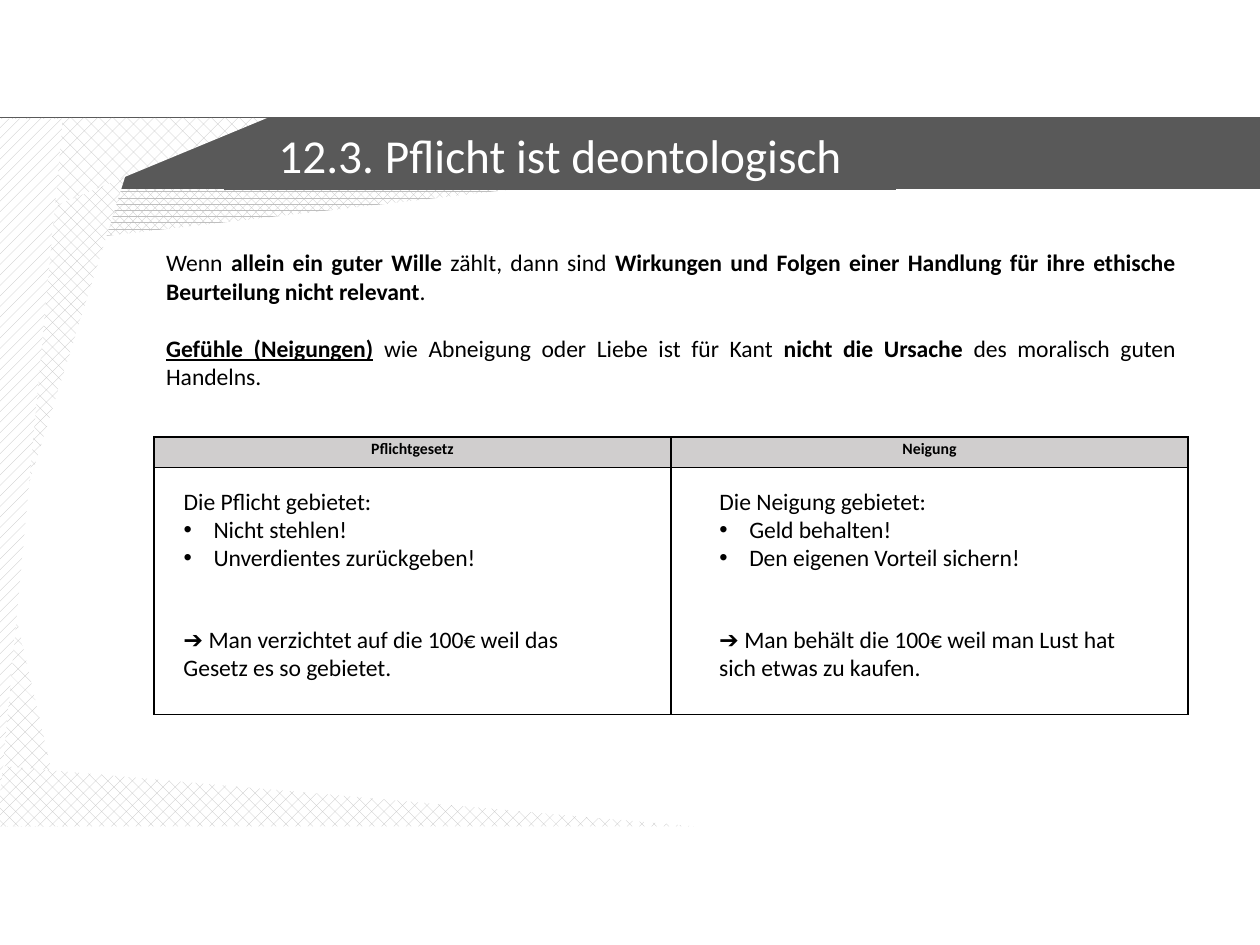
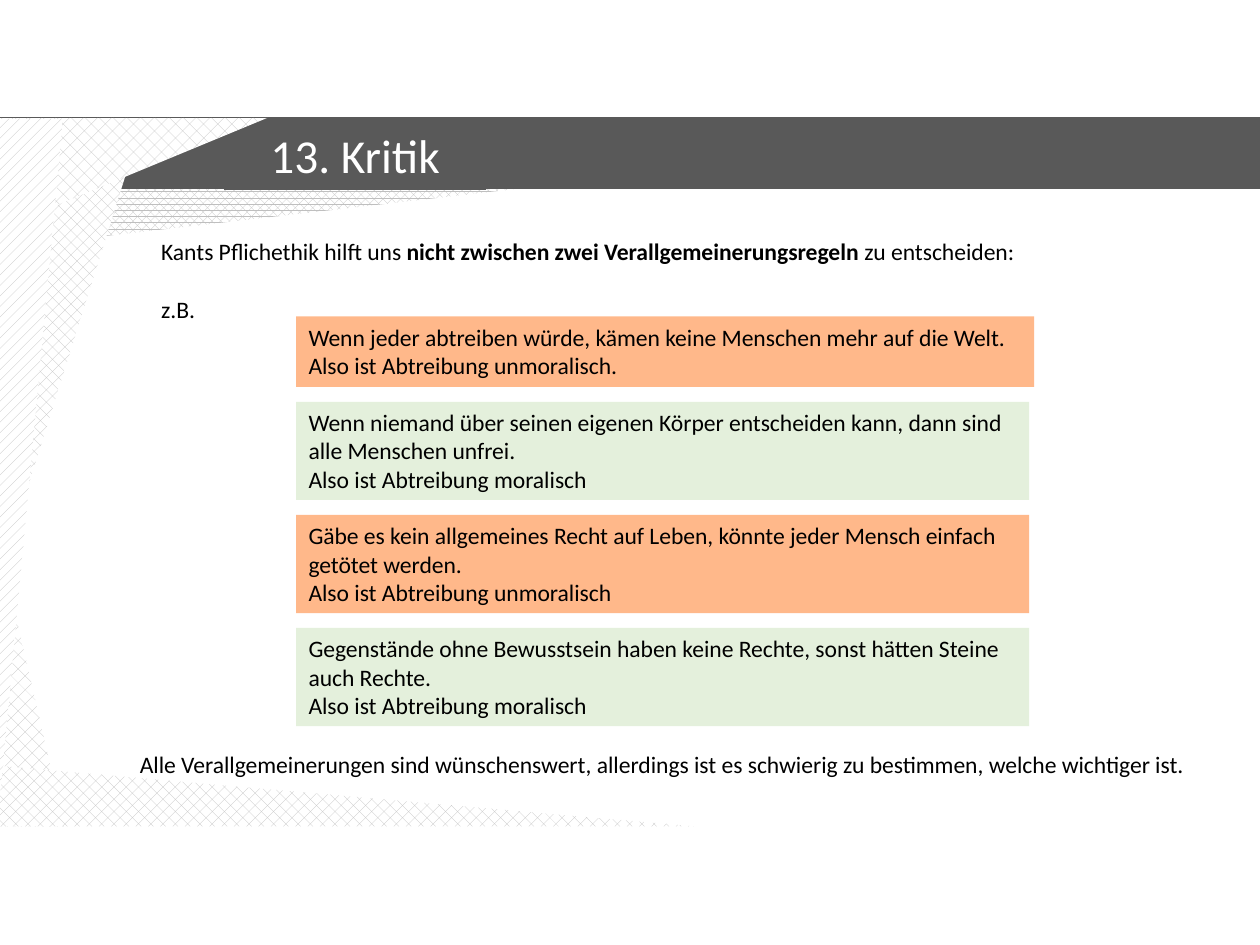
from lxml.etree import SubElement
from pptx import Presentation
from pptx.dml.color import RGBColor
from pptx.enum.dml import MSO_PATTERN
from pptx.enum.shapes import MSO_SHAPE
from pptx.enum.text import MSO_ANCHOR, MSO_AUTO_SIZE, PP_ALIGN
from pptx.oxml.ns import qn
from pptx.util import Cm, Pt

COLORS = {
    "band": "595959",
    "pattern": "BFBFBF",
    "white": "FFFFFF",
    "black": "000000",
    "header": "D0CECE",
    "immoral": "FF6600",
    "moral": "C5E0B4",
}
FONT = "Calibri"
BODY_SIZE = 13.5
BLANK_LINE = 16.5


def color(name):
    return RGBColor.from_string(COLORS[name])


def write(frame, text, size=BODY_SIZE, fill="black", align=PP_ALIGN.LEFT,
          before=0, after=0, spacing=1, bullet=False, anchor=MSO_ANCHOR.TOP):
    """Append one paragraph to the frame; *asterisks* enclose bold text."""
    frame.word_wrap = True
    frame.auto_size = MSO_AUTO_SIZE.NONE
    frame.vertical_anchor = anchor
    paragraph = frame.paragraphs[0]
    if paragraph.runs:
        paragraph = frame.add_paragraph()
    properties = paragraph._p.get_or_add_pPr()
    indent = Cm(0.6) if bullet else 0
    properties.set("marL", str(indent))
    properties.set("indent", str(-indent))
    if bullet:
        SubElement(properties, qn("a:buChar"), char="•")
    else:
        SubElement(properties, qn("a:buNone"))
    paragraph.alignment = align
    paragraph.line_spacing = spacing
    paragraph.space_before = Pt(before)
    paragraph.space_after = Pt(after)
    for index, part in enumerate(text.split("*")):
        if part:
            run = paragraph.add_run()
            run.text = part
            run.font.name = FONT
            run.font.size = Pt(size)
            run.font.bold = index % 2 == 1
            run.font.color.rgb = color(fill)
    return paragraph


presentation = Presentation()
presentation.slide_width = Cm(25.4)
presentation.slide_height = Cm(19.05)
layouts = presentation.slide_layouts
duty_slide = presentation.slides.add_slide(layouts.get_by_name("Two Content"))
critique_slide = presentation.slides.add_slide(layouts.get_by_name("Title Only"))

# Shared frame: left, top, width, height, rotation, apex, pattern
TRIANGLE_BEHIND = (0, 2.36, 23.04, 2.64, 180, 1, MSO_PATTERN.PERCENT_70)
TRIANGLES_IN_FRONT = [
    (-3.23, 5.59, 9.32, 2.92, 90, 0, MSO_PATTERN.PERCENT_30),
    (1.57, 0.79, 2.24, 5.41, 90, 0, MSO_PATTERN.PERCENT_25),
    (0, 11.02, 1.3, 5.64, 0, 0, MSO_PATTERN.PERCENT_25),
    (0, 15.44, 14, 1.22, 0, 0, MSO_PATTERN.PERCENT_30),
    (-6.38, 8.74, 14, 1.3, 90, 0, MSO_PATTERN.PERCENT_20),
]
TITLES = [
    (duty_slide, "12.3. Pflicht ist deontologisch", 13.54),
    (critique_slide, "13. Kritik", 5.28),
]
for slide, title_text, title_width in TITLES:
    for triangle in [TRIANGLE_BEHIND, *TRIANGLES_IN_FRONT]:
        *box, rotation, apex, pattern = triangle
        shape = slide.shapes.add_shape(MSO_SHAPE.ISOSCELES_TRIANGLE, *map(Cm, box))
        shape.shadow.inherit = False
        shape.rotation = rotation
        shape.adjustments[0] = apex
        shape.line.fill.background()
        shape.fill.patterned()
        shape.fill.pattern = pattern
        shape.fill.fore_color.rgb = color("pattern")
        shape.fill.back_color.rgb = color("white")

        # The band and the title lie between the back and front triangles
        if triangle is TRIANGLE_BEHIND:
            band = slide.shapes.add_shape(
                MSO_SHAPE.RECTANGLE, 0, Cm(2.36), Cm(25.4), Cm(1.45))
            band.shadow.inherit = False
            band.line.fill.background()
            title = slide.shapes.title
            title.left, title.top = Cm(4.52), Cm(2.41)
            title.width, title.height = Cm(title_width), Cm(1.42)
            for filled in (band, title):
                filled.fill.solid()
                filled.fill.fore_color.rgb = color("band")
            write(title.text_frame, title_text, size=27, fill="white",
                  align=PP_ALIGN.CENTER, anchor=MSO_ANCHOR.MIDDLE)
            band._element.addnext(title._element)

# Slide 1: introduction
intro = duty_slide.shapes.add_textbox(Cm(3.1), Cm(4.88), Cm(20.85), Cm(3.15)).text_frame
write(intro, "Wenn *allein ein guter Wille* zählt, dann sind *Wirkungen und Folgen einer "
      "Handlung für ihre ethische Beurteilung nicht relevant*.", align=PP_ALIGN.JUSTIFY)
feelings = write(intro, "*Gefühle (Neigungen)* wie Abneigung oder Liebe ist für Kant"
                 "* nicht die Ursache *des moralisch guten Handelns.",
                 align=PP_ALIGN.JUSTIFY, before=BLANK_LINE)
feelings.runs[0].font.underline = True

# Slide 1: table frame
table = duty_slide.shapes.add_table(
    2, 2, Cm(3.1), Cm(8.81), Cm(20.85), Cm(5.59)).table
table.horz_banding = False
table.first_row = False
table.rows[0].height, table.rows[1].height = Cm(0.61), Cm(4.98)
for cell in table.iter_cells():
    cell_properties = cell._tc.get_or_add_tcPr()
    for side in ("lnL", "lnR", "lnT", "lnB"):
        border = SubElement(cell_properties, qn(f"a:{side}"), w=str(Pt(1)))
        border_fill = SubElement(border, qn("a:solidFill"))
        SubElement(border_fill, qn("a:srgbClr"), val=COLORS["black"])
    cell.fill.background()
for column, heading in enumerate(["Pflichtgesetz", "Neigung"]):
    cell = table.cell(0, column)
    cell.fill.solid()
    cell.fill.fore_color.rgb = color("header")
    cell.margin_left = cell.margin_right = Cm(0.15)
    cell.margin_top = cell.margin_bottom = 0
    write(cell.text_frame, f"*{heading}*", size=9, align=PP_ALIGN.CENTER,
          spacing=1.15, after=6.2)

# Slide 1: commands and conclusions over the table columns
COLUMNS = [
    (3.45, "Die Pflicht gebietet:", ["Nicht stehlen!", "Unverdientes zurückgeben!"],
     "➔ Man verzichtet auf die 100€ weil das Gesetz es so gebietet."),
    (14.25, "Die Neigung gebietet:", ["Geld behalten!", "Den eigenen Vorteil sichern!"],
     "➔ Man behält die 100€ weil man Lust hat sich etwas zu kaufen."),
]
for body_index, (left, lead, commands, conclusion) in enumerate(COLUMNS, start=1):
    body = duty_slide.placeholders[body_index]
    body.left, body.top, body.width, body.height = Cm(left), Cm(9.68), Cm(8.97), Cm(1.98)
    write(body.text_frame, lead)
    for command in commands:
        write(body.text_frame, command, bullet=True)
    result = duty_slide.shapes.add_textbox(Cm(left), Cm(12.47), Cm(8.97), Cm(1.42))
    write(result.text_frame, conclusion)

# Slide 2: framing sentences
SENTENCES = [
    (3, 4.65, 20.14, "Kants Pflichethik hilft uns *nicht zwischen zwei "
                     "Verallgemeinerungsregeln *zu entscheiden:"),
    (3, 5.82, 1.22, "z.B."),
    (2.57, 14.99, 21.89, "Alle Verallgemeinerungen sind wünschenswert, allerdings ist es "
                         "schwierig zu bestimmen, welche wichtiger ist."),
]
for left, top, width, sentence in SENTENCES:
    box = critique_slide.shapes.add_textbox(Cm(left), Cm(top), Cm(width), Cm(0.84))
    write(box.text_frame, sentence)

# Slide 2: stacked arguments with equal gaps
ARGUMENTS = [
    ("immoral", 14.88, 1.42,
     "Wenn jeder abtreiben würde, kämen keine Menschen mehr auf die Welt.",
     "Also ist Abtreibung unmoralisch."),
    ("moral", 14.78, 1.98,
     "Wenn niemand über seinen eigenen Körper entscheiden kann, dann sind alle "
     "Menschen unfrei.", "Also ist Abtreibung moralisch"),
    ("immoral", 14.78, 1.98,
     "Gäbe es kein allgemeines Recht auf Leben, könnte jeder Mensch einfach "
     "getötet werden.", "Also ist Abtreibung unmoralisch"),
    ("moral", 14.78, 1.98,
     "Gegenstände ohne Bewusstsein haben keine Rechte, sonst hätten Steine auch "
     "Rechte.", "Also ist Abtreibung moralisch"),
]
top = 6.38
for verdict, width, height, premise, conclusion in ARGUMENTS:
    argument = critique_slide.shapes.add_shape(
        MSO_SHAPE.RECTANGLE, Cm(5.97), Cm(top), Cm(width), Cm(height))
    argument.shadow.inherit = False
    argument.line.fill.background()
    argument.fill.solid()
    argument.fill.fore_color.rgb = color(verdict)
    fill_color = argument._element.spPr.find(qn("a:solidFill")).find(qn("a:srgbClr"))
    SubElement(fill_color, qn("a:alpha"), val="46000")
    write(argument.text_frame, premise)
    write(argument.text_frame, conclusion)
    top += height + 0.3

presentation.save("out.pptx")
